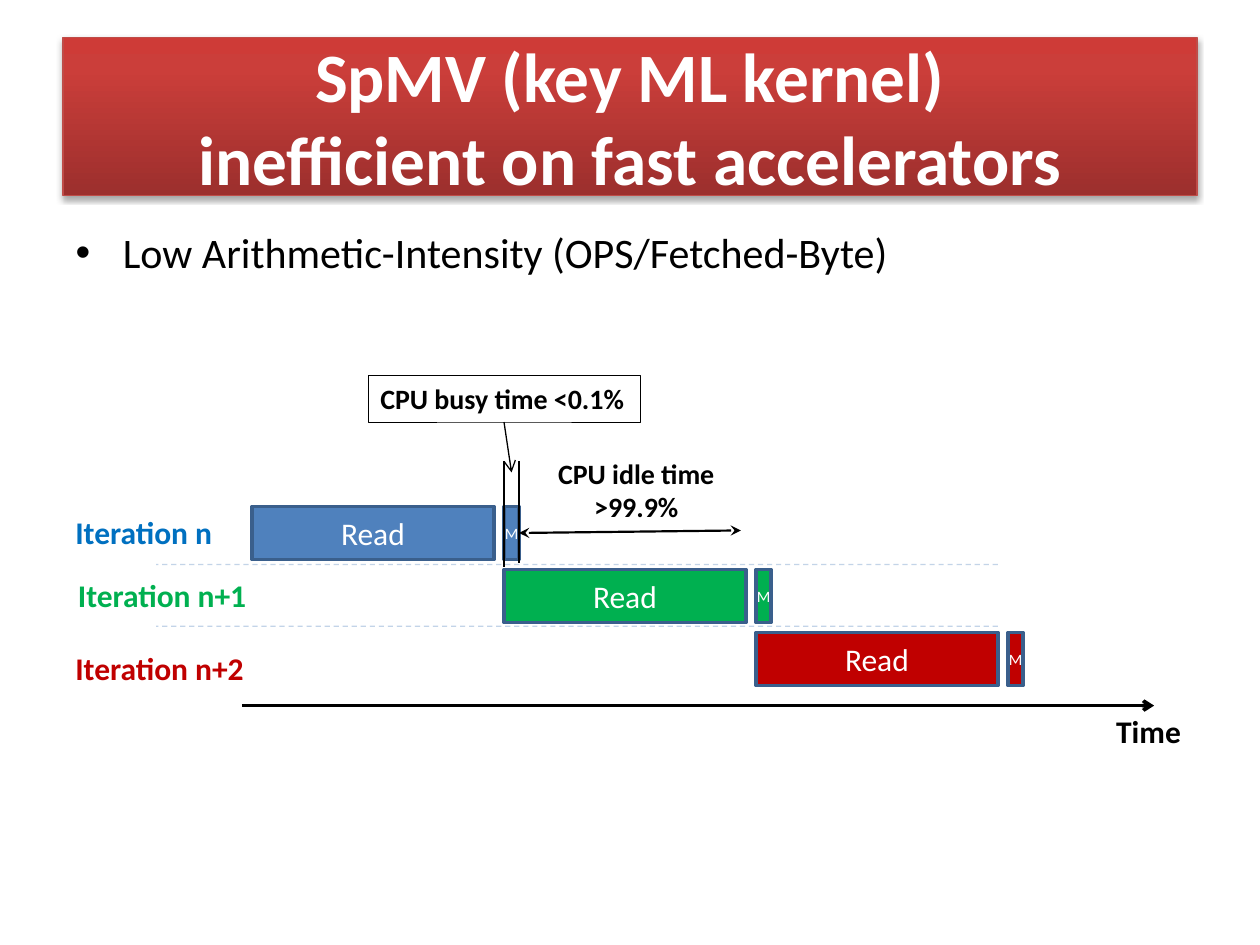
from dataclasses import dataclass

import pptx
import pptx.dml.color
import pptx.enum.dml
import pptx.enum.shapes
import pptx.enum.text
import pptx.oxml
import pptx.oxml.ns
import pptx.util

ALIGN = pptx.enum.text.PP_ALIGN
ANCHOR = pptx.enum.text.MSO_ANCHOR
AUTO_SIZE = pptx.enum.text.MSO_AUTO_SIZE
RECTANGLE = pptx.enum.shapes.MSO_SHAPE.RECTANGLE
NAMESPACE = pptx.oxml.ns.nsdecls("a")


@dataclass(frozen=True)
class Theme:
    font: str = "Calibri"
    black: str = "000000"
    white: str = "FFFFFF"
    banner_line: str = "BF4C48"
    banner_stops: tuple = ((0, "9C2F2D"), (80, "CB3E3A"), (100, "CE3B37"))
    bar_line: str = "3A5F8C"
    divider: str = "4B7EBC"
    title: float = 39.6
    body: float = 24
    label: float = 18
    note: float = 16
    tiny: float = 9


THEME = Theme()
# Name, bar colour, label colour, label column and label row
ITERATIONS = (
    ("Iteration n", "4F81BD", "0070C0", -0.75, 0),
    ("Iteration n+1", "00B050", "00B050", -0.74, 1),
    ("Iteration n+2", "C00000", "C00000", -0.75, 2.16),
)


@dataclass(frozen=True)
class Box:
    """An area in inches, divided into columns and rows."""
    left: float
    top: float
    width: float
    height: float
    columns: int = 1
    rows: int = 1

    def point(self, column, row):
        return (pptx.util.Inches(self.left + column * self.width / self.columns),
                pptx.util.Inches(self.top + row * self.height / self.rows))

    def area(self, column=0, row=0, across=1, down=1):
        left, top = self.point(column, row)
        right, bottom = self.point(column + across, row + down)
        return left, top, right - left, bottom - top


def rgb(value):
    return pptx.dml.color.RGBColor.from_string(value)


def place(shape, area):
    shape.left, shape.top, shape.width, shape.height = area


def write(shape, text, size=THEME.label, color=THEME.black, bold=False,
          align=None, anchor=ANCHOR.TOP, wrap=False, grow=False, inset=None):
    frame = shape.text_frame
    frame.text = text
    frame.word_wrap = wrap
    frame.auto_size = AUTO_SIZE.SHAPE_TO_FIT_TEXT if grow else AUTO_SIZE.NONE
    frame.vertical_anchor = anchor
    if inset is not None:
        frame.margin_left = frame.margin_right = inset
    for paragraph in frame.paragraphs:
        paragraph.alignment = align
        for run in paragraph.runs:
            font = run.font
            font.name, font.size, font.bold = THEME.font, pptx.util.Pt(size), bold
            font.color.rgb = rgb(color)


def add_text(slide, area, text, **text_format):
    write(slide.shapes.add_textbox(*area), text, grow=True, bold=True, **text_format)


def add_rectangle(slide, area, line, width, fill=None):
    shape = slide.shapes.add_shape(RECTANGLE, *area)
    shape.shadow.inherit = False
    if fill:
        shape.fill.solid()
        shape.fill.fore_color.rgb = rgb(fill)
    else:
        shape.fill.background()
    shape.line.color.rgb = rgb(line)
    shape.line.width = pptx.util.Pt(width)
    return shape


def add_line(slide, start, end, color=THEME.black, width=0.75,
             head=None, tail=None, dashed=False, opacity=None):
    connector = slide.shapes.add_connector(
        pptx.enum.shapes.MSO_CONNECTOR.STRAIGHT, *start, *end)
    line = connector.line
    line.color.rgb = rgb(color)
    line.width = pptx.util.Pt(width)
    if dashed:
        line.dash_style = pptx.enum.dml.MSO_LINE.DASH
    properties = connector.element.spPr
    outline = properties.find(pptx.oxml.ns.qn("a:ln"))
    if opacity:
        outline.find(".//" + pptx.oxml.ns.qn("a:srgbClr")).append(
            pptx.oxml.parse_xml(f'<a:alpha {NAMESPACE} val="{opacity * 1000}"/>'))
    for tag, kind in (("headEnd", head), ("tailEnd", tail)):
        if kind:
            outline.append(pptx.oxml.parse_xml(f'<a:{tag} {NAMESPACE} type="{kind}"/>'))
    properties.append(pptx.oxml.parse_xml(f"<a:effectLst {NAMESPACE}/>"))


def fill_title(slide, box):
    title = slide.shapes.title
    place(title, box.area())
    write(title, "SpMV (key ML kernel)\vinefficient on fast accelerators",
          size=THEME.title, color=THEME.white, bold=True, align=ALIGN.CENTER,
          anchor=ANCHOR.MIDDLE, wrap=True)
    title.line.color.rgb = rgb(THEME.banner_line)
    title.line.width = pptx.util.Pt(0.75)
    stops = "".join(f'<a:gs pos="{position * 1000}"><a:srgbClr val="{color}"/></a:gs>'
                    for position, color in THEME.banner_stops)
    outline = title.element.spPr.find(pptx.oxml.ns.qn("a:ln"))
    outline.addprevious(pptx.oxml.parse_xml(
        f'<a:gradFill {NAMESPACE} rotWithShape="1"><a:gsLst>{stops}</a:gsLst>'
        '<a:lin ang="16200000" scaled="0"/></a:gradFill>'))
    outline.addnext(pptx.oxml.parse_xml(
        f'<a:effectLst {NAMESPACE}><a:outerShdw blurRad="{pptx.util.Pt(3.1)}" '
        f'dist="{pptx.util.Pt(1.8)}" dir="5400000" rotWithShape="0">'
        f'<a:srgbClr val="{THEME.black}"><a:alpha val="35000"/></a:srgbClr>'
        '</a:outerShdw></a:effectLst>'))


def fill_body(slide, box):
    body = slide.placeholders[1]
    place(body, box.area())
    write(body, "Low Arithmetic-Intensity (OPS/Fetched-Byte)", size=THEME.body, wrap=True)


def draw_iterations(slide, box):
    """Each iteration takes one row and starts one column after the last."""
    for index, (name, fill, color, column, row) in enumerate(ITERATIONS):
        for start, across, text, size in ((index, 0.96, "Read", THEME.label),
                                          (index + 1, 0.06, "M", THEME.tiny)):
            bar = add_rectangle(slide, box.area(start, index, across, 0.84),
                                THEME.bar_line, 2, fill)
            write(bar, text, size=size, color=THEME.white, align=ALIGN.CENTER,
                  anchor=ANCHOR.MIDDLE, inset=0)
        add_text(slide, box.area(column, row, 0.65 if index == 0 else 0.78, 0.8),
                 name, color=color)
    for row in (0.92, 1.9):
        add_line(slide, box.point(2.96, row), box.point(-0.38, row),
                 color=THEME.divider, dashed=True, opacity=33)


def draw_time_axis(slide, box):
    add_line(slide, box.point(-0.04, 3.16), box.point(3.58, 3.16), width=2, tail="arrow")
    add_text(slide, box.area(3.38, 3.16, 0.36, 0.8), "Time")


def draw_processor_notes(slide, box):
    for column, bottom in ((1, 0.96), (1.06, 0.9)):
        add_line(slide, box.point(column, -0.72), box.point(column, bottom))
    add_line(slide, box.point(1.06, 0.42), box.point(1.94, 0.38), width=1.25,
             head="stealth", tail="stealth")
    add_text(slide, box.area(1.13, -0.9, 0.79, 1.82), "CPU idle time\n>99.9%",
             size=THEME.note, align=ALIGN.CENTER, wrap=True)
    callout = add_rectangle(slide, box.area(0.46, -2.08, 1.08, 0.74), THEME.black, 0.25)
    write(callout, "CPU busy time <0.1%", size=THEME.note, bold=True,
          align=ALIGN.LEFT, grow=True)
    add_line(slide, box.point(1, -1.34), box.point(1.03, -0.54), tail="arrow")


def main():
    presentation = pptx.Presentation()
    presentation.slide_width = pptx.util.Inches(10)
    presentation.slide_height = pptx.util.Inches(7.5)
    slide = presentation.slides.add_slide(presentation.slide_layouts[1])
    fill_title(slide, Box(0.5, 0.3, 9, 1.25))
    fill_body(slide, Box(0.5, 1.75, 7.67, 0.62))
    timeline = Box(2, 4.02, 8, 1.5, columns=4, rows=3)
    draw_iterations(slide, timeline)
    draw_time_axis(slide, timeline)
    draw_processor_notes(slide, timeline)
    presentation.save("out.pptx")


if __name__ == "__main__":
    main()
